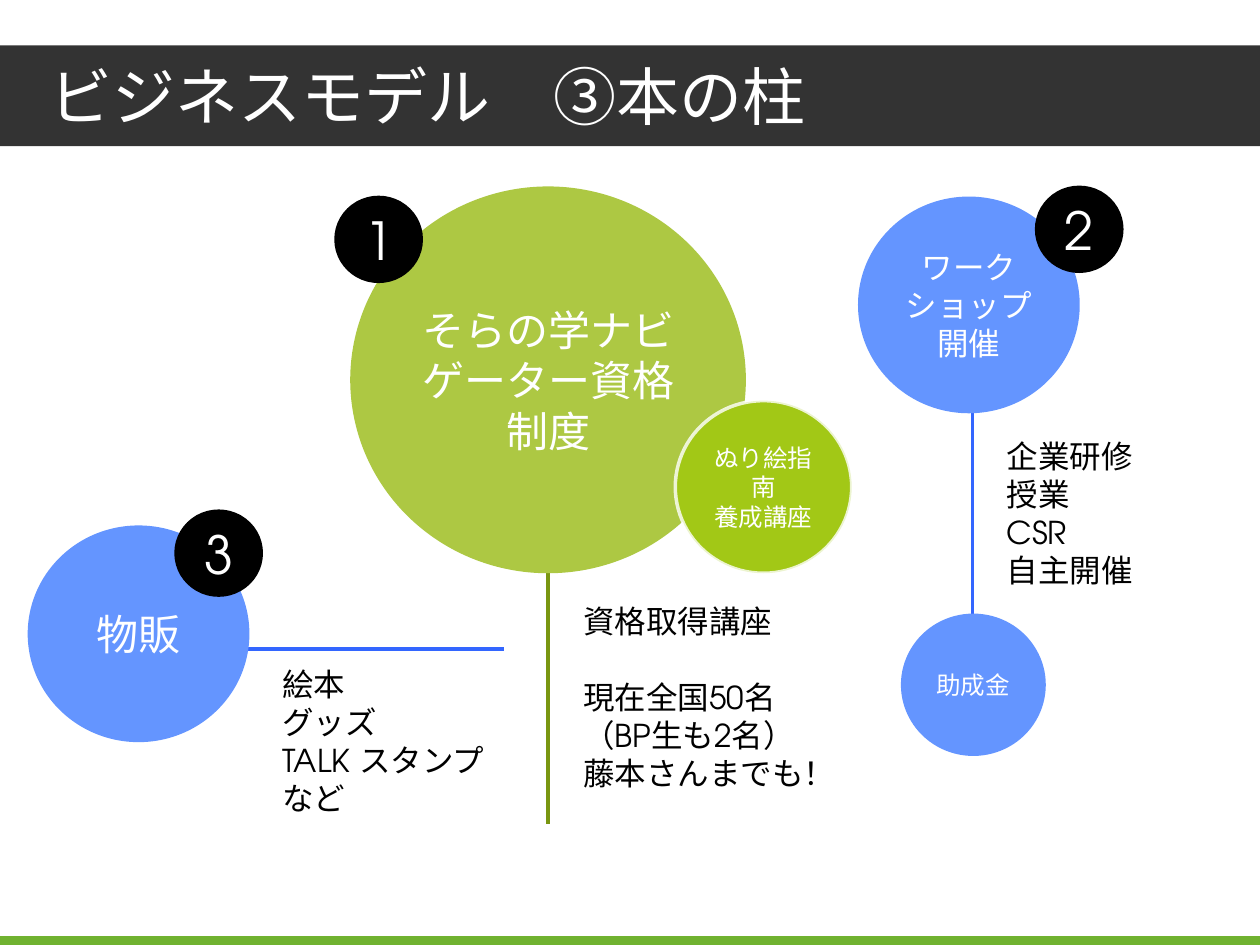
"""Build the slide on the three pillars of the business model."""
from dataclasses import dataclass

from lxml import etree
from pptx import Presentation
from pptx.dml.color import RGBColor
from pptx.enum.shapes import MSO_CONNECTOR, MSO_SHAPE
from pptx.enum.text import MSO_ANCHOR, MSO_AUTO_SIZE, PP_ALIGN
from pptx.oxml.ns import qn
from pptx.util import Inches, Pt

OVAL, RECTANGLE = MSO_SHAPE.OVAL, MSO_SHAPE.RECTANGLE
STRAIGHT = MSO_CONNECTOR.STRAIGHT
LEFT, CENTER = PP_ALIGN.LEFT, PP_ALIGN.CENTER
TOP, MIDDLE = MSO_ANCHOR.TOP, MSO_ANCHOR.MIDDLE
NO_FIT = MSO_AUTO_SIZE.NONE


@dataclass(frozen=True)
class Theme:
    font: str = "TeX Gyre Adventor"
    white: str = "FFFFFF"
    black: str = "000000"
    band: str = "333333"
    footer: str = "70B230"
    blue: str = "6495FF"
    blue_line: str = "3366FF"
    green: str = "ADC843"
    green_line: str = "799611"
    lime: str = "A2C816"
    title: int = 36
    number: int = 30
    large: int = 24
    body: int = 18
    small: int = 14
    line: int = 2
    gap: int = 22


THEME = Theme()
WIDTH, HEIGHT = 10, 7.5
TITLE = "ビジネスモデル　③本の柱"
TITLE_BAND = (0, 0.36, WIDTH, 0.8)
FOOTER_BAND = (0, 7.43, WIDTH, 0.08)

BRANCHES = [
    ((7.72, 3.03), (7.72, 5.64), THEME.blue_line),
    ((1.65, 5.15), (4, 5.15), THEME.blue_line),
    ((4.35, 3.93), (4.35, 6.54), THEME.green_line),
]
CIRCLES = [
    (["ワークショップ", "開催"], (6.81, 1.56, 1.76, 1.72), THEME.blue, THEME.body),
    (["そらの学ナビゲーター資格制度"], (2.78, 1.48, 3.14, 3.07), THEME.green, THEME.large),
    (["物販"], (0.22, 4.17, 1.76, 1.72), THEME.blue, THEME.large),
    (["助成金"], (7.15, 4.87, 1.15, 1.13), THEME.blue, THEME.small),
]
COURSE = (["ぬり絵指南", "養成講座"], (5.36, 3.18, 1.4, 1.37), THEME.lime, THEME.small)
BADGE_SIZE = (0.69, 0.68)
BADGES = [("1", (2.66, 1.56)), ("2", (8.22, 1.48)), ("3", (1.39, 4.05))]
NOTES = [
    ([["企業研修", "授業", "CSR", "自主開催"]], (7.89, 3.42, 1.21, 1.31)),
    ([["絵本", "グッズ", "TALK スタンプ", "など"]], (2.14, 5.23, 1.78, 1.31)),
    ([["資格取得講座"], ["現在全国50名", "（BP生も2名）", "藤本さんまでも！"]],
     (4.53, 4.73, 2.22, 1.62)),
]


def color(value):
    return RGBColor.from_string(value)


def inches(lengths):
    return [Inches(length) for length in lengths]


def write(frame, groups, *, size, ink=THEME.white, align=CENTER, anchor=MIDDLE):
    """Fill a text frame with groups of paragraphs, spaced one line apart."""
    frame.word_wrap = True
    frame.auto_size = NO_FIT
    frame.vertical_anchor = anchor
    lines = [(text, index > 0 and row == 0)
             for index, group in enumerate(groups) for row, text in enumerate(group)]
    for position, (text, spaced) in enumerate(lines):
        paragraph = frame.add_paragraph() if position else frame.paragraphs[0]
        paragraph.text = text
        paragraph.alignment = align
        paragraph.space_before = Pt(THEME.gap if spaced else 0)
        font = paragraph.font
        font.name, font.size = THEME.font, Pt(size)
        font.color.rgb = color(ink)


def add_block(slide, kind, box, fill):
    shape = slide.shapes.add_shape(kind, *inches(box))
    shape.shadow.inherit = False
    shape.fill.solid()
    shape.fill.fore_color.rgb = color(fill)
    shape.line.fill.background()
    return shape


def add_circle(slide, lines, box, fill, size):
    circle = add_block(slide, OVAL, box, fill)
    write(circle.text_frame, [lines], size=size)
    return circle


def add_branch(slide, start, end, ink):
    branch = slide.shapes.add_connector(STRAIGHT, *inches(start + end))
    branch.line.color.rgb = color(ink)
    branch.line.width = Pt(THEME.line)
    etree.SubElement(branch._element.spPr, qn("a:effectLst"))


def add_title(slide):
    title = slide.shapes.title
    title.left, title.top, title.width, title.height = inches(TITLE_BAND)
    title.fill.solid()
    title.fill.fore_color.rgb = color(THEME.band)
    title.text_frame.margin_left = Inches(0.39)
    title.text_frame.margin_right = Inches(0.3)
    write(title.text_frame, [[TITLE]], size=THEME.title, align=LEFT)


def add_course(slide):
    course = add_circle(slide, *COURSE)
    course.line.color.rgb = color(THEME.white)
    course.line.width = Pt(THEME.line)
    ink = course.line._ln.find(".//" + qn("a:srgbClr"))
    etree.SubElement(ink, qn("a:alpha"), val="80000")


def main():
    presentation = Presentation()
    presentation.slide_width, presentation.slide_height = inches((WIDTH, HEIGHT))
    slide = presentation.slides.add_slide(presentation.slide_layouts[5])
    add_title(slide)
    add_block(slide, RECTANGLE, FOOTER_BAND, THEME.footer)
    for branch in BRANCHES:
        add_branch(slide, *branch)
    for circle in CIRCLES:
        add_circle(slide, *circle)
    for groups, box in NOTES:
        note = slide.shapes.add_textbox(*inches(box))
        note.text_frame.margin_right = Inches(0.05)
        write(note.text_frame, groups, size=THEME.body, ink=THEME.black,
              align=LEFT, anchor=TOP)
    add_course(slide)
    for number, corner in BADGES:
        badge = add_circle(slide, [number], corner + BADGE_SIZE, THEME.black, THEME.number)
        badge.line.color.rgb = color(THEME.black)
        badge.line.width = Pt(1)
    presentation.save("out.pptx")


if __name__ == "__main__":
    main()
